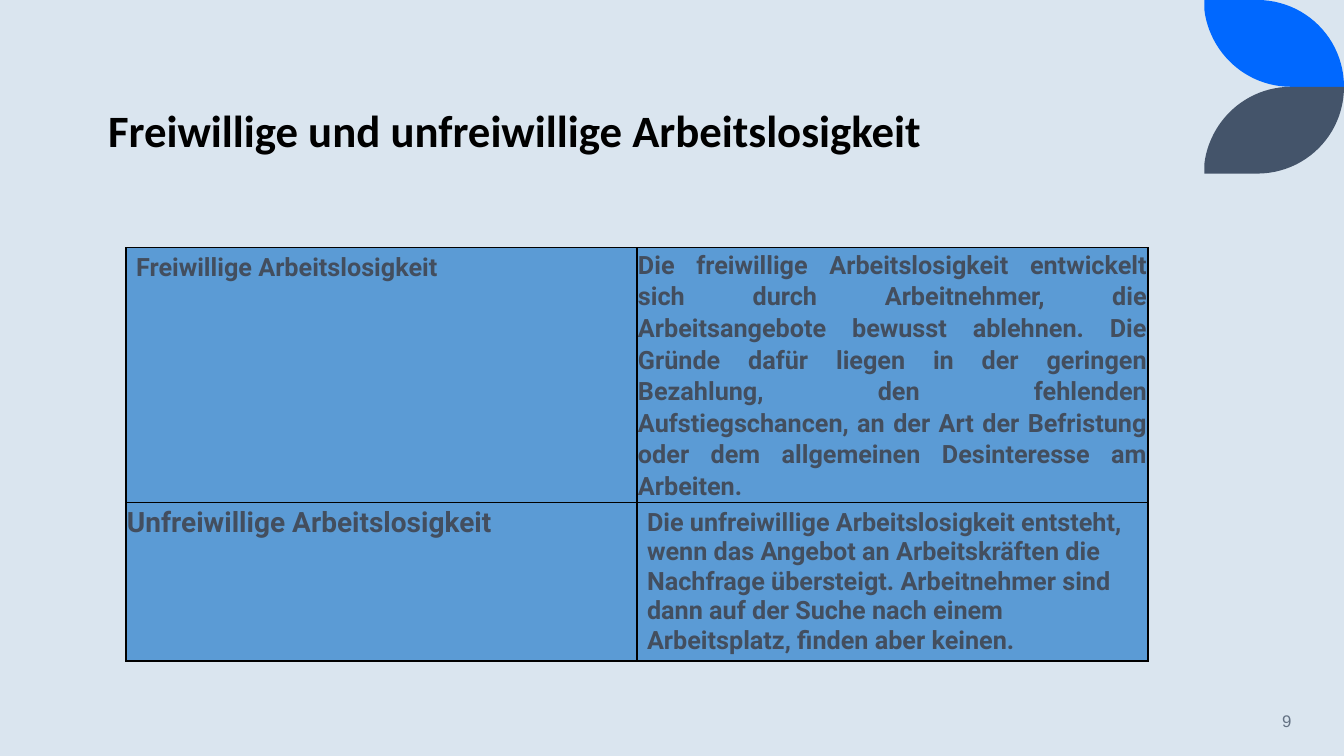
from lxml import etree
from pptx import Presentation
from pptx.dml.color import RGBColor
from pptx.enum.text import MSO_ANCHOR, PP_ALIGN
from pptx.oxml.ns import qn
from pptx.util import Pt

LEFT, RIGHT, JUST = PP_ALIGN.LEFT, PP_ALIGN.RIGHT, PP_ALIGN.JUSTIFY
TOP, MID, BOTTOM = MSO_ANCHOR.TOP, MSO_ANCHOR.MIDDLE, MSO_ANCHOR.BOTTOM

TITLE = "Freiwillige und unfreiwillige Arbeitslosigkeit"
NUMBER = "9"
WIDE = dict(pad=(7.2, 3.6, 7.2, 3.6))
TIGHT = dict(pad=(0.72,) * 4, align=JUST, line=1.07, after=8)
ROWS = [
    [
        ("Freiwillige Arbeitslosigkeit", 18, WIDE),
        ("Die freiwillige Arbeitslosigkeit entwickelt sich durch Arbeitnehmer, "
         "die Arbeitsangebote bewusst ablehnen. Die Gründe dafür liegen in der "
         "geringen Bezahlung, den fehlenden Aufstiegschancen, an der Art der "
         "Befristung oder dem allgemeinen Desinteresse am Arbeiten.", 18, TIGHT),
    ],
    [
        ("Unfreiwillige Arbeitslosigkeit", 20, TIGHT),
        ("Die unfreiwillige Arbeitslosigkeit entsteht, wenn das Angebot an "
         "Arbeitskräften die Nachfrage übersteigt. Arbeitnehmer sind dann auf "
         "der Suche nach einem Arbeitsplatz, finden aber keinen.", 18, WIDE),
    ],
]
HEIGHTS = [182, 113]
COL = 365
LEAF_X, LEAF_H = 860.2, 62
CURVES = [
    [(37.8, 0), (72, 0), (99.8, 27.4), (99.8, 62)],
    [(62, 62), (29.6, 62), (3.6, 37.4), (0, 6.5)],
]
LEAVES = [("0068FF", 0, 1), ("44546A", 2 * LEAF_H, -1)]
STEPS = 24


def color(code):
    return RGBColor.from_string(code)


def write(box, text, size=18, font="Roboto", ink="434E5E", bold=True,
          align=LEFT, line=1, after=0):
    box.text = text
    par = box.paragraphs[0]
    par.alignment = align
    par.line_spacing = line
    par.space_before = Pt(0)
    par.space_after = Pt(after)
    face = par.runs[0].font
    face.name, face.size, face.bold = font, Pt(size), bold
    face.color.rgb = color(ink)


def inset(part, pad):
    (part.margin_left, part.margin_top,
     part.margin_right, part.margin_bottom) = [Pt(side) for side in pad]


def bezier(ends):
    for step in range(STEPS + 1):
        t = step / STEPS
        share = ((1 - t) ** 3, 3 * t * (1 - t) ** 2, 3 * t * t * (1 - t), t ** 3)
        yield tuple(sum(w * p[axis] for w, p in zip(share, ends))
                    for axis in (0, 1))


def leaf(slide, tone, base, sign):
    dots = [(Pt(LEAF_X + x), Pt(base + sign * y))
            for ends in CURVES for x, y in bezier(ends)]
    pen = slide.shapes.build_freeform(Pt(LEAF_X), Pt(base))
    pen.add_line_segments(dots, close=True)
    shape = pen.convert_to_shape()
    shape.shadow.inherit = False
    shape.fill.solid()
    shape.fill.fore_color.rgb = color(tone)
    shape.line.fill.background()


def border(cell):
    props = cell._tc.get_or_add_tcPr()
    for side in ("lnL", "lnR", "lnT", "lnB"):
        edge = etree.SubElement(props, qn("a:" + side), w=str(Pt(1)))
        fill = etree.SubElement(edge, qn("a:solidFill"))
        etree.SubElement(fill, qn("a:srgbClr"), val="000000")


def grid(slide):
    frame = slide.shapes.add_table(len(ROWS), 2, Pt(90), Pt(177),
                                   Pt(2 * COL), Pt(sum(HEIGHTS)))
    table = frame.table
    table.first_row = table.horz_banding = False
    for row, height in zip(table.rows, HEIGHTS):
        row.height = Pt(height)
    for i, row in enumerate(ROWS):
        for j, (text, size, style) in enumerate(row):
            cell = table.cell(i, j)
            form = dict(style)
            inset(cell, form.pop("pad"))
            cell.vertical_anchor = TOP
            border(cell)
            cell.fill.solid()
            cell.fill.fore_color.rgb = color("5B9BD5")
            write(cell.text_frame, text, size=size, **form)


def place(shape, left, top, width, height):
    shape.left, shape.top = Pt(left), Pt(top)
    shape.width, shape.height = Pt(width), Pt(height)


def main():
    deck = Presentation()
    deck.slide_width, deck.slide_height = Pt(960), Pt(540)
    slide = deck.slides.add_slide(deck.slide_layouts[5])
    back = slide.background.fill
    back.solid()
    back.fore_color.rgb = color("DAE5EF")
    for tone, base, sign in LEAVES:
        leaf(slide, tone, base, sign)

    title = slide.shapes.title
    place(title, 70, 86, 770, 84)
    box = title.text_frame
    write(box, TITLE, size=32, font="Calibri", ink="000000", line=0.9)
    box.word_wrap = True
    box.vertical_anchor = BOTTOM
    inset(box, (7.2, 0, 7.2, 58))

    grid(slide)

    page = slide.shapes.add_textbox(Pt(799), Pt(500.5), Pt(130.5), Pt(29))
    box = page.text_frame
    box.word_wrap = True
    box.vertical_anchor = MID
    write(box, NUMBER, size=12, font="Arial", ink="637183", bold=False,
          align=RIGHT)
    deck.save("out.pptx")


if __name__ == "__main__":
    main()
